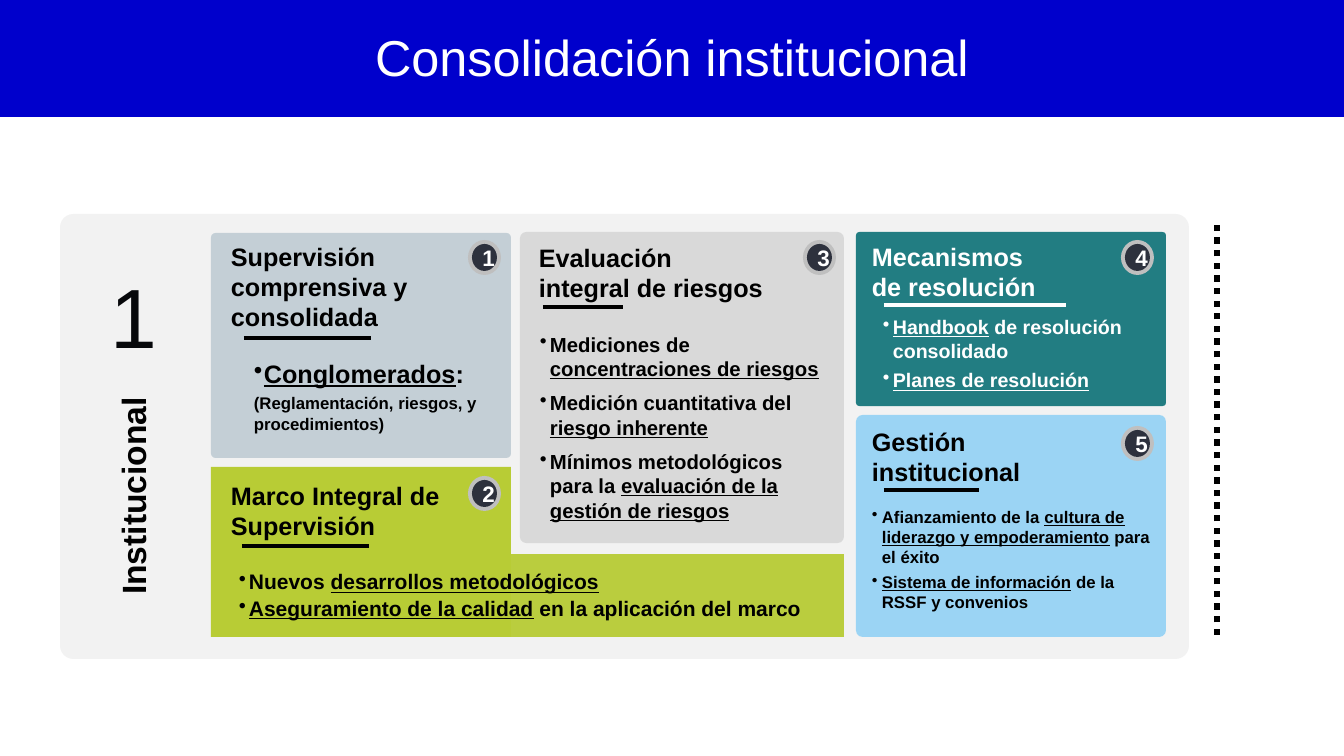
from lxml.etree import SubElement
from pptx import Presentation
from pptx.dml.color import RGBColor
from pptx.enum.dml import MSO_LINE as Dash
from pptx.enum.shapes import MSO_CONNECTOR as Link, MSO_SHAPE as Shape
from pptx.enum.text import MSO_ANCHOR as Anchor, PP_ALIGN as Align
from pptx.oxml.ns import qn
from pptx.util import Pt

SCALE = 12192000 / 1344
BLACK, WHITE = "000000", "FFFFFF"


def px(*lengths):
    """Turn px lengths into EMU."""
    return [round(length * SCALE) for length in lengths]


def rgb(code):
    """Turn a hex string into a colour."""
    return RGBColor.from_string(code)


class Board:
    """Holds the style and the current slide."""

    font = "Arial"
    indent = 10
    badge_ring, badge_core = "BFBFBF", "2D313D"

    def __init__(self, deck):
        """Add a title-only slide to the deck."""
        self.slide = deck.slides.add_slide(deck.slide_layouts[5])
        self.shapes = self.slide.shapes

    def add_runs(self, paragraph, text, size, color, bold=True):
        """Fill a paragraph, underlining the parts between underscores."""
        for index, part in enumerate(text.split("_")):
            if not part:
                continue
            run = paragraph.add_run()
            run.text = part
            run.font.name, run.font.size = self.font, Pt(size)
            run.font.bold, run.font.color.rgb = bold, rgb(color)
            if index % 2:
                run.font.underline = True

    def title(self, text, box, band, color):
        """Place the title over a coloured band."""
        header = self.panel(band, color, Shape.RECTANGLE)
        self.shapes._spTree.insert(2, header._element)
        title = self.shapes.title
        title.left, title.top, title.width, title.height = px(*box)
        frame = title.text_frame
        frame.vertical_anchor = Anchor.MIDDLE
        frame.paragraphs[0].alignment = Align.CENTER
        self.add_runs(frame.paragraphs[0], text, 36, WHITE, False)

    def panel(self, box, color, kind=Shape.ROUNDED_RECTANGLE, corner=None, opacity=100):
        """Add a filled shape without outline."""
        panel = self.shapes.add_shape(kind, *px(*box))
        panel.shadow.inherit = False
        panel.fill.solid()
        panel.fill.fore_color.rgb = rgb(color)
        panel.line.fill.background()
        if corner is not None:
            panel.adjustments[0] = corner
        if opacity < 100:
            tint = panel._element.spPr.find(qn("a:solidFill"))[0]
            SubElement(tint, qn("a:alpha"), val=str(opacity * 1000))
        return panel

    def text(self, box, lines, size=18, color=BLACK, bold=True, align=Align.LEFT, anchor=Anchor.TOP):
        """Add a wrapped text box with one paragraph per line."""
        label = self.shapes.add_textbox(*px(*box))
        frame = label.text_frame
        frame.word_wrap = True
        frame.vertical_anchor = anchor
        for index, line in enumerate(lines):
            paragraph = frame.add_paragraph() if index else frame.paragraphs[0]
            paragraph.alignment = align
            self.add_runs(paragraph, line, size, color, bold)
        return label

    def bullets(self, box, items, size, color=BLACK, gap=0, anchor=Anchor.TOP):
        """Add a bulleted list with a gap in points between items."""
        points = self.text(box, items, size, color, anchor=anchor)
        hang = px(self.indent)[0]
        for index, paragraph in enumerate(points.text_frame.paragraphs):
            settings = paragraph._p.get_or_add_pPr()
            settings.set("marL", str(hang))
            settings.set("indent", str(-hang))
            SubElement(settings, qn("a:buChar"), char="•")
            if index:
                paragraph.space_before = Pt(gap)
        return points

    def rule(self, start, end, color=BLACK, width=2.25, dash=None):
        """Draw a straight line."""
        rule = self.shapes.add_connector(Link.STRAIGHT, *px(*start, *end))
        rule.line.color.rgb = rgb(color)
        rule.line.width = Pt(width)
        if dash:
            rule.line.dash_style = dash
        SubElement(rule._element.spPr, qn("a:effectLst"))

    def badge(self, number, left, top):
        """Draw a numbered round badge."""
        self.panel((left, top, 33, 35), self.badge_ring, Shape.OVAL)
        self.panel((left + 4, top + 4, 25, 27), self.badge_core, Shape.OVAL)
        numeral = self.text((left + 4, top + 3, 25, 29), [str(number)], 16, WHITE,
                            align=Align.CENTER, anchor=Anchor.MIDDLE)
        frame = numeral.text_frame
        frame.margin_left = px(8)[0]
        frame.margin_top = frame.margin_right = frame.margin_bottom = 0


def main():
    """Build the slide and save it."""
    deck = Presentation()
    deck.slide_width, deck.slide_height = px(1344, 756)
    board = Board(deck)
    board.title("Consolidación institucional", (0, 12, 1344, 88), (0, -2, 1344, 119), "0000CC")

    board.panel((60, 214, 1129, 445), "F2F2F2", corner=0.03)
    board.panel((211, 467, 300, 170), "B8CC35", Shape.RECTANGLE)
    board.panel((511, 554, 333, 83), "B8CC35", Shape.RECTANGLE, opacity=95)
    board.panel((520, 232, 324, 311), "D9D9D9", corner=0.02)
    board.panel((211, 233, 300, 225), "0D4767", corner=0.02, opacity=20)
    board.panel((856, 232, 310, 174), "227D82", corner=0.02)
    board.panel((856, 415, 310, 222), "45B7F7", corner=0.03, opacity=50)

    board.text((70, 270, 128, 90), ["1"], 60, "07080B", False, Align.CENTER, Anchor.MIDDLE)
    area = board.text((-15, 472, 293, 48), ["Institucional"], 24, align=Align.CENTER)
    area.rotation = 270

    headings = [
        ((221, 236, 301, 80), ["Supervisión comprensiva y consolidada"], BLACK, (244, 371, 338)),
        ((221, 475, 333, 67), ["Marco Integral de Supervisión"], BLACK, (242, 369, 546)),
        ((529, 237, 301, 80), ["Evaluación", "integral de riesgos"], BLACK, (543, 623, 307)),
        ((862, 236, 337, 68), ["Mecanismos", "de resolución"], WHITE, (884, 1066, 305)),
        ((862, 421, 356, 80), ["Gestión", "institucional"], BLACK, (884, 979, 490)),
    ]
    for box, lines, color, (left, right, level) in headings:
        board.text(box, lines, color=color)
        board.rule((left, level), (right, level), color)

    badge_spots = [(468, 240), (468, 476), (803, 240), (1121, 240), (1121, 426)]
    for number, spot in enumerate(badge_spots, 1):
        board.badge(number, *spot)

    conglomerates = board.bullets((244, 353, 255, 101), ["_Conglomerados_:"], 18)
    scope = conglomerates.text_frame.add_paragraph()
    scope.space_before = Pt(3.5)
    board.add_runs(scope, "(Reglamentación, riesgos, y procedimientos)", 12, BLACK)
    board.bullets((229, 564, 600, 77), [
        "Nuevos _desarrollos metodológicos_",
        "_Aseguramiento de la calidad_ en la aplicación del marco",
    ], 15, gap=1)
    board.bullets((530, 327, 311, 84), [
        "Mediciones de _concentraciones de riesgos_",
        "Medición cuantitativa del _riesgo inherente_",
        "Mínimos metodológicos para la _evaluación de la gestión de riesgos_",
    ], 14.5, gap=7)
    board.bullets((873, 310, 302, 84), [
        "_Handbook_ de resolución consolidado",
        "_Planes de resolución_",
    ], 14, WHITE, gap=4.5)
    board.bullets((862, 511, 308, 97), [
        "Afianzamiento de la _cultura de liderazgo y empoderamiento_ para el éxito",
        "_Sistema de información_ de la RSSF y convenios",
    ], 12, gap=3.5, anchor=Anchor.MIDDLE)

    board.rule((1217, 635), (1217, 222), width=4.5, dash=Dash.ROUND_DOT)
    deck.save("out.pptx")


if __name__ == "__main__":
    main()
